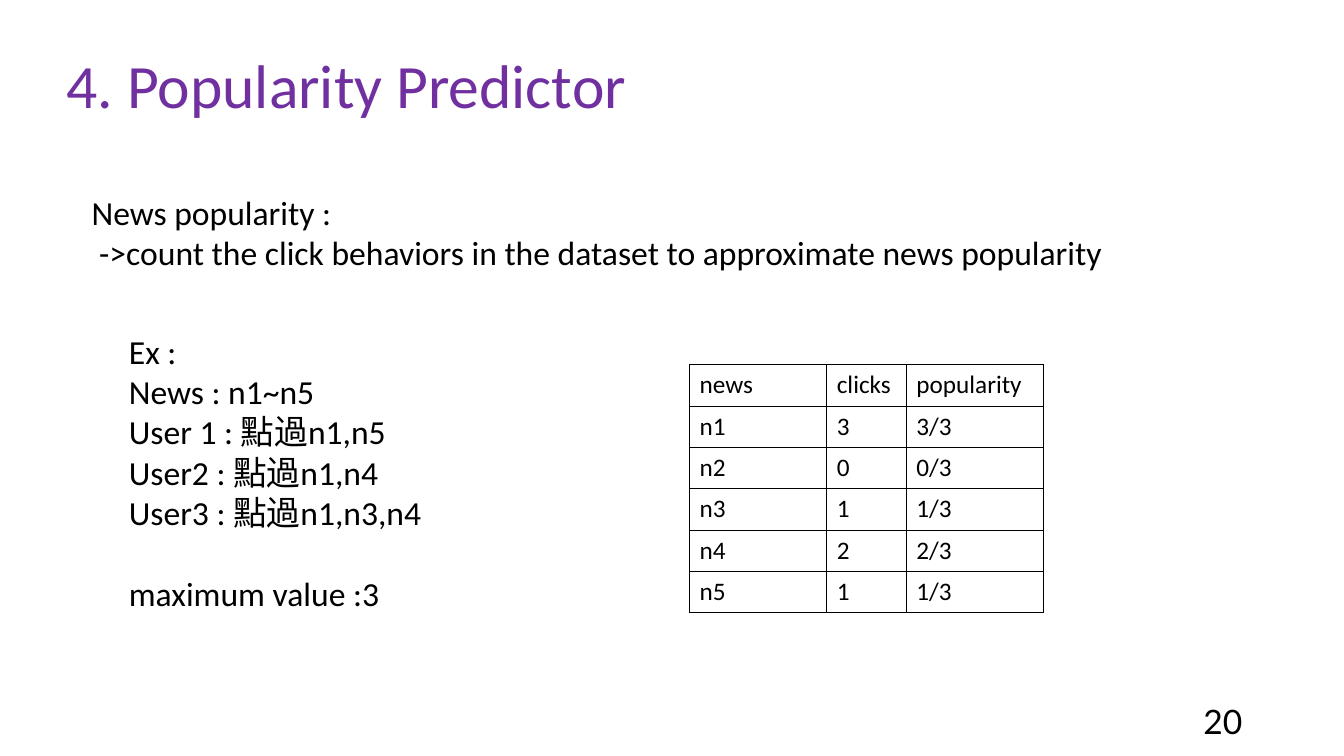
from lxml.etree import SubElement
from pptx import Presentation
from pptx.dml.color import RGBColor
from pptx.enum.text import MSO_ANCHOR, PP_ALIGN
from pptx.oxml.ns import qn
from pptx.util import Inches, Pt

# Content
TITLE = "4. Popularity Predictor"
DEFINITION = [
    "News popularity :",
    " ->count the click behaviors in the dataset to approximate news popularity",
]
EXAMPLE = [
    "Ex :",
    "News : n1~n5",
    "User 1 : 點過n1,n5",
    "User2 : 點過n1,n4",
    "User3 : 點過n1,n3,n4",
    "maximum value :3",
]
HEADER = ("news", "clicks", "popularity")
CLICKS = {"n1": 3, "n2": 0, "n3": 1, "n4": 2, "n5": 1}
PAGE = "20"

# Layout, in inches
COLS = (1.36, 0.79, 1.36)
ROW = 0.41
TABLE_AT = (6.84, 3.62)
BLACK, PURPLE = "000000", "7030A0"


def color(hex_string):
    return RGBColor.from_string(hex_string)


def format_text(tf, lines, size, font="Calibri", hue=BLACK, align=PP_ALIGN.LEFT):
    tf.word_wrap = True
    for i, line in enumerate(lines):
        p = tf.paragraphs[0] if i == 0 else tf.add_paragraph()
        p.text = line
        p.alignment = align
        p.font.size = Pt(size)
        p.font.name = font
        p.font.color.rgb = color(hue)


def add_text(s, box, lines, size=24, **style):
    tf = s.shapes.add_textbox(*map(Inches, box)).text_frame
    format_text(tf, lines, size, **style)
    return tf


def add_borders(cell):
    tcPr = cell._tc.get_or_add_tcPr()
    for i, side in enumerate(("a:lnL", "a:lnR", "a:lnT", "a:lnB")):
        ln = tcPr.makeelement(qn(side), {"w": str(Pt(1))})
        tcPr.insert(i, ln)
        fill = SubElement(ln, qn("a:solidFill"))
        SubElement(fill, qn("a:srgbClr"), val=BLACK)


prs = Presentation()
prs.slide_width, prs.slide_height = Inches(13.33), Inches(7.5)
s = prs.slides.add_slide(prs.slide_layouts[5])

# Title
title = s.shapes.title
title.left, title.top, title.width, title.height = map(Inches, (0.56, 0.15, 11.5, 1.45))
format_text(title.text_frame, [TITLE], 44, hue=PURPLE)
title.text_frame.vertical_anchor = MSO_ANCHOR.MIDDLE
title.text_frame.paragraphs[0].line_spacing = 0.9

# Definition and example
add_text(s, (0.81, 1.85, 10.39, 0.91), DEFINITION)
example = add_text(s, (1.18, 3.23, 3.13, 3), EXAMPLE)
example.paragraphs[-1].space_before = Pt(29)

# Popularity table: clicks over the largest click count
most = max(CLICKS.values())
rows = [HEADER] + [(news, str(n), f"{n}/{most}") for news, n in CLICKS.items()]
size = (sum(COLS), ROW * len(rows))
table = s.shapes.add_table(len(rows), len(COLS), *map(Inches, TABLE_AT + size)).table
table.first_row = table.horz_banding = False
for col, width in zip(table.columns, COLS):
    col.width = Inches(width)
for r, values in enumerate(rows):
    table.rows[r].height = Inches(ROW)
    for c, value in enumerate(values):
        cell = table.cell(r, c)
        cell.fill.background()
        add_borders(cell)
        format_text(cell.text_frame, [value], 18)

# Slide number
number = add_text(s, (9.42, 6.95, 3, 0.4), [PAGE], font="Lato", align=PP_ALIGN.RIGHT)
number.vertical_anchor = MSO_ANCHOR.MIDDLE

prs.save("out.pptx")
